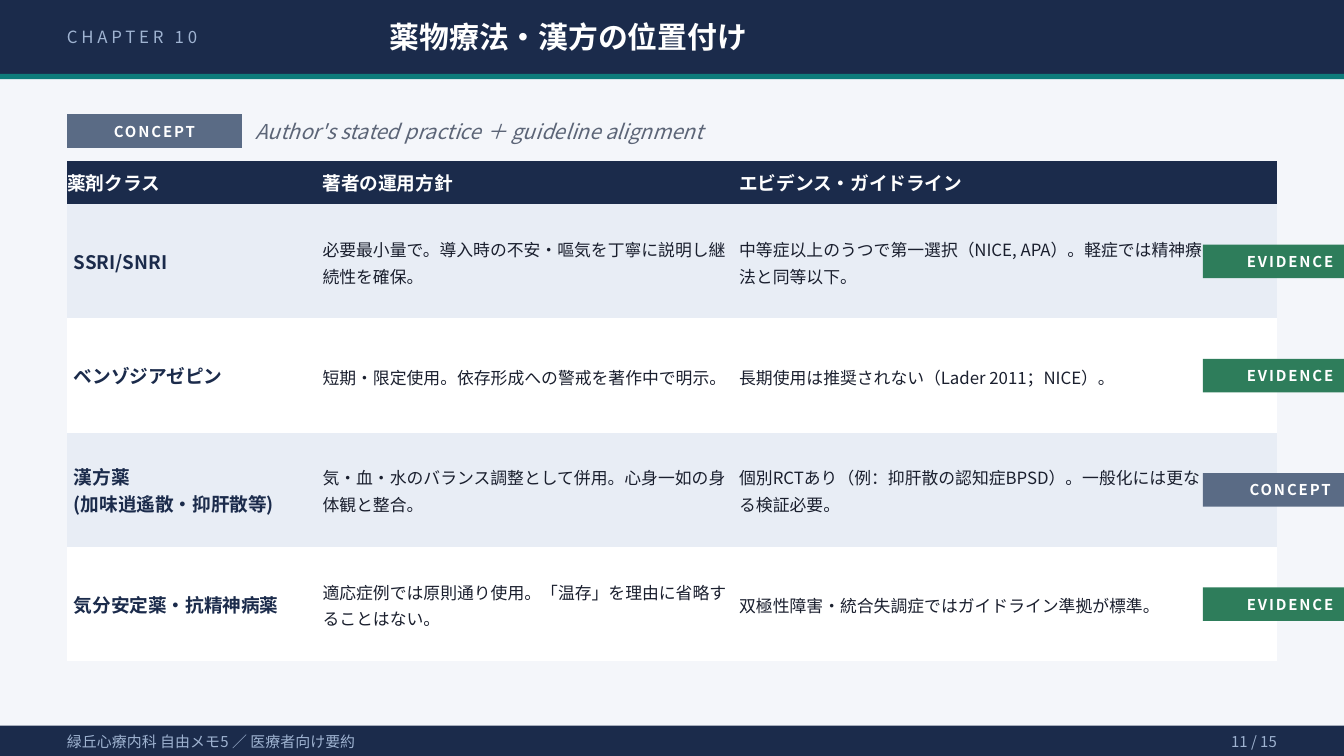
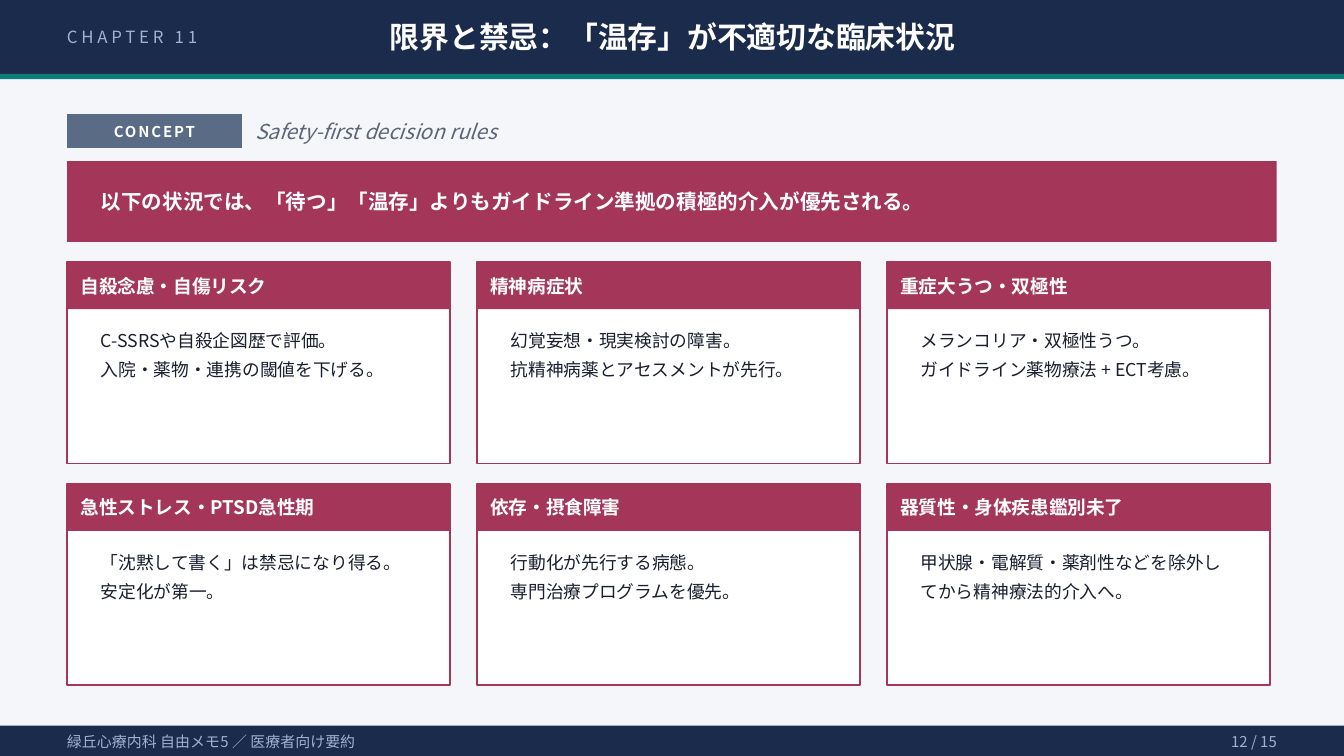
"""Build two chapter slides: a medication table and a grid of contraindication cards."""
import pptx
import pptx.dml.color
import pptx.enum.shapes
import pptx.enum.text
import pptx.oxml.ns
import pptx.util

FONT = "Noto Sans CJK JP"
NAVY = pptx.dml.color.RGBColor(0x1B, 0x2B, 0x4B)
TEAL = pptx.dml.color.RGBColor(0x0E, 0x7C, 0x7B)
SLATE = pptx.dml.color.RGBColor(0x5A, 0x6B, 0x85)
GREEN = pptx.dml.color.RGBColor(0x2E, 0x7D, 0x5B)
CRIMSON = pptx.dml.color.RGBColor(0xA4, 0x36, 0x5A)
PALE = pptx.dml.color.RGBColor(0xF4, 0xF6, 0xFA)
STRIPE = pptx.dml.color.RGBColor(0xE8, 0xED, 0xF5)
MIST = pptx.dml.color.RGBColor(0x9F, 0xB3, 0xD1)
GREY = pptx.dml.color.RGBColor(0x5C, 0x65, 0x77)
INK = pptx.dml.color.RGBColor(0x1A, 0x1F, 0x2E)
WHITE = pptx.dml.color.RGBColor(0xFF, 0xFF, 0xFF)
LEFT = pptx.enum.text.PP_ALIGN.LEFT
CENTER = pptx.enum.text.PP_ALIGN.CENTER
RIGHT = pptx.enum.text.PP_ALIGN.RIGHT
TOP = pptx.enum.text.MSO_ANCHOR.TOP
MIDDLE = pptx.enum.text.MSO_ANCHOR.MIDDLE
NO_STYLE = "{2D5ABB26-0587-4C30-8999-92F81FD0307C}"
BADGE_COLORS = {"CONCEPT": SLATE, "EVIDENCE": GREEN}
PADDED = (0.1, 0.05, 0.1, 0.05)


def write(holder, text, size, color, bold=False, italic=False, align=LEFT,
          spacing=None, tracking=0, margins=(0, 0, 0, 0), anchor=MIDDLE):
    for side, margin in zip(("left", "top", "right", "bottom"), margins):
        setattr(holder, f"margin_{side}", pptx.util.Inches(margin))
    holder.vertical_anchor = anchor
    frame = getattr(holder, "text_frame", holder)
    frame.word_wrap = True
    look = {"name": FONT, "size": pptx.util.Pt(size), "bold": bold, "italic": italic}
    for number, line in enumerate(text.split("\n")):
        para = frame.add_paragraph() if number else frame.paragraphs[0]
        para.alignment = align
        para.line_spacing = spacing
        span = para.add_run()
        span.text = line
        for name, value in look.items():
            setattr(span.font, name, value)
        span.font.color.rgb = color
        props = span.font._element
        if tracking:
            props.set("spc", str(tracking * 100))
        east = props.makeelement(pptx.oxml.ns.qn("a:ea"), {"typeface": FONT})
        props.find(pptx.oxml.ns.qn("a:latin")).addnext(east)


def block(page, place, fill, line=None):
    box = page.shapes.add_shape(pptx.enum.shapes.MSO_SHAPE.RECTANGLE,
                                *map(pptx.util.Inches, place))
    box.shadow.inherit = False
    box.fill.solid()
    box.fill.fore_color.rgb = fill
    if line is None:
        box.line.fill.background()
    else:
        box.line.color.rgb = line
        box.line.width = pptx.util.Pt(1)
    return box


deck = pptx.Presentation()
deck.slide_width = pptx.util.Inches(10)
deck.slide_height = deck.slide_width * 9 // 16

chapters = [
    (10, "薬物療法・漢方の位置付け", "Author's stated practice ＋ guideline alignment"),
    (11, "限界と禁忌：「温存」が不適切な臨床状況", "Safety-first decision rules"),
]
medications = [
    ("SSRI/SNRI", "必要最小量で。導入時の不安・嘔気を丁寧に説明し継続性を確保。",
     "中等症以上のうつで第一選択（NICE, APA）。軽症では精神療法と同等以下。", "EVIDENCE"),
    ("ベンゾジアゼピン", "短期・限定使用。依存形成への警戒を著作中で明示。",
     "長期使用は推奨されない（Lader 2011；NICE）。", "EVIDENCE"),
    ("漢方薬\n(加味逍遙散・抑肝散等)", "気・血・水のバランス調整として併用。心身一如の身体観と整合。",
     "個別RCTあり（例：抑肝散の認知症BPSD）。一般化には更なる検証必要。", "CONCEPT"),
    ("気分安定薬・抗精神病薬", "適応症例では原則通り使用。「温存」を理由に省略することはない。",
     "双極性障害・統合失調症ではガイドライン準拠が標準。", "EVIDENCE"),
]
cards = [
    ("自殺念慮・自傷リスク", "C-SSRSや自殺企図歴で評価。\n入院・薬物・連携の閾値を下げる。"),
    ("精神病症状", "幻覚妄想・現実検討の障害。\n抗精神病薬とアセスメントが先行。"),
    ("重症大うつ・双極性", "メランコリア・双極性うつ。\nガイドライン薬物療法 + ECT考慮。"),
    ("急性ストレス・PTSD急性期", "「沈黙して書く」は禁忌になり得る。\n安定化が第一。"),
    ("依存・摂食障害", "行動化が先行する病態。\n専門治療プログラムを優先。"),
    ("器質性・身体疾患鑑別未了", "甲状腺・電解質・薬剤性などを除外してから精神療法的介入へ。"),
]

pages = []
badges = []
for chapter, heading, subtitle in chapters:
    page = deck.slides.add_slide(deck.slide_layouts[5])
    pages.append(page)
    badges.append((page, 0.5, 0.85, "CONCEPT"))
    page.background.fill.solid()
    page.background.fill.fore_color.rgb = PALE
    block(page, (0, 0, 10, 0.55), NAVY)
    block(page, (0, 0.55, 10, 0.04), TEAL)
    block(page, (0, 5.4, 10, 0.23), NAVY)

    title = page.shapes.title
    title.element.getparent().append(title.element)
    for name, value in {"left": 2.9, "top": 0.05, "width": 6.9, "height": 0.45}.items():
        setattr(title, name, pptx.util.Inches(value))
    title.text_frame.auto_size = pptx.enum.text.MSO_AUTO_SIZE.NONE
    write(title.text_frame, heading, 16, WHITE, bold=True)

    labels = [
        ((0.4, 0.05, 2.5, 0.45), f"CHAPTER {chapter}", 9, MIST,
         {"tracking": 2, "margins": PADDED}),
        ((1.9, 0.85, 7, 0.25), subtitle, 11, GREY, {"italic": True}),
        ((0.4, 5.4, 6, 0.23), "緑丘心療内科 自由メモ5 ／ 医療者向け要約", 8, MIST,
         {"margins": PADDED}),
        ((8.8, 5.4, 0.8, 0.23), f"{chapter + 1} / 15", 8, MIST,
         {"align": RIGHT, "margins": PADDED}),
    ]
    for place, text, size, color, style in labels:
        box = page.shapes.add_textbox(*map(pptx.util.Inches, place))
        write(box.text_frame, text, size, color, **style)

medication_page, limits_page = pages

grid = medication_page.shapes.add_table(
    len(medications) + 1, 3, *map(pptx.util.Inches, (0.5, 1.2, 9, 3.72)))
grid.element.find(".//" + pptx.oxml.ns.qn("a:tableStyleId")).text = NO_STYLE
table = grid.table
table.horz_banding = False
for column, width in zip(table.columns, (1.9, 3.1, 4)):
    column.width = pptx.util.Inches(width)
table.rows[0].height = pptx.util.Inches(0.32)
for cell, text in zip(table.rows[0].cells, ("薬剤クラス", "著者の運用方針", "エビデンス・ガイドライン")):
    cell.fill.solid()
    cell.fill.fore_color.rgb = NAVY
    write(cell, text, 10, WHITE, bold=True)

body_styles = [
    {"size": 10, "color": NAVY, "bold": True, "spacing": 1.0, "margins": (0.05, 0, 0, 0)},
    {"size": 9, "color": INK, "spacing": 1.1, "margins": (0, 0, 0.05, 0)},
    {"size": 9, "color": INK, "spacing": 1.1, "margins": (0, 0, 0.55, 0)},
]
for number, (*texts, level) in enumerate(medications):
    row = table.rows[number + 1]
    row.height = pptx.util.Inches(0.85)
    for cell, text, style in zip(row.cells, texts, body_styles):
        cell.fill.solid()
        cell.fill.fore_color.rgb = WHITE if number % 2 else STRIPE
        write(cell, text, **style)
    badges.append((medication_page, 8.95, 1.82 + number * 0.85, level))

for page, left, top, level in badges:
    badge = block(page, (left, top, 1.3, 0.25), BADGE_COLORS[level])
    write(badge.text_frame, level, 8, WHITE, bold=True, align=CENTER, tracking=1,
          margins=PADDED)

banner = block(limits_page, (0.5, 1.2, 9, 0.6), CRIMSON)
write(banner.text_frame, "以下の状況では、「待つ」「温存」よりもガイドライン準拠の積極的介入が優先される。",
      11, WHITE, bold=True, margins=(0.25, 0.05, 0.25, 0.05))

for number, (heading, advice) in enumerate(cards):
    left = 0.5 + number % 3 * 3.05
    top = 1.95 + number // 3 * 1.65
    card = block(limits_page, (left, top, 2.85, 1.5), WHITE, CRIMSON)
    write(card.text_frame, advice, 9.5, INK, spacing=1.35,
          margins=(0.25, 0.45, 0.25, 0.1), anchor=TOP)
    header = block(limits_page, (left, top, 2.85, 0.35), CRIMSON)
    write(header.text_frame, heading, 10, WHITE, bold=True, margins=(0.1, 0, 0.1, 0))

deck.save("out.pptx")
